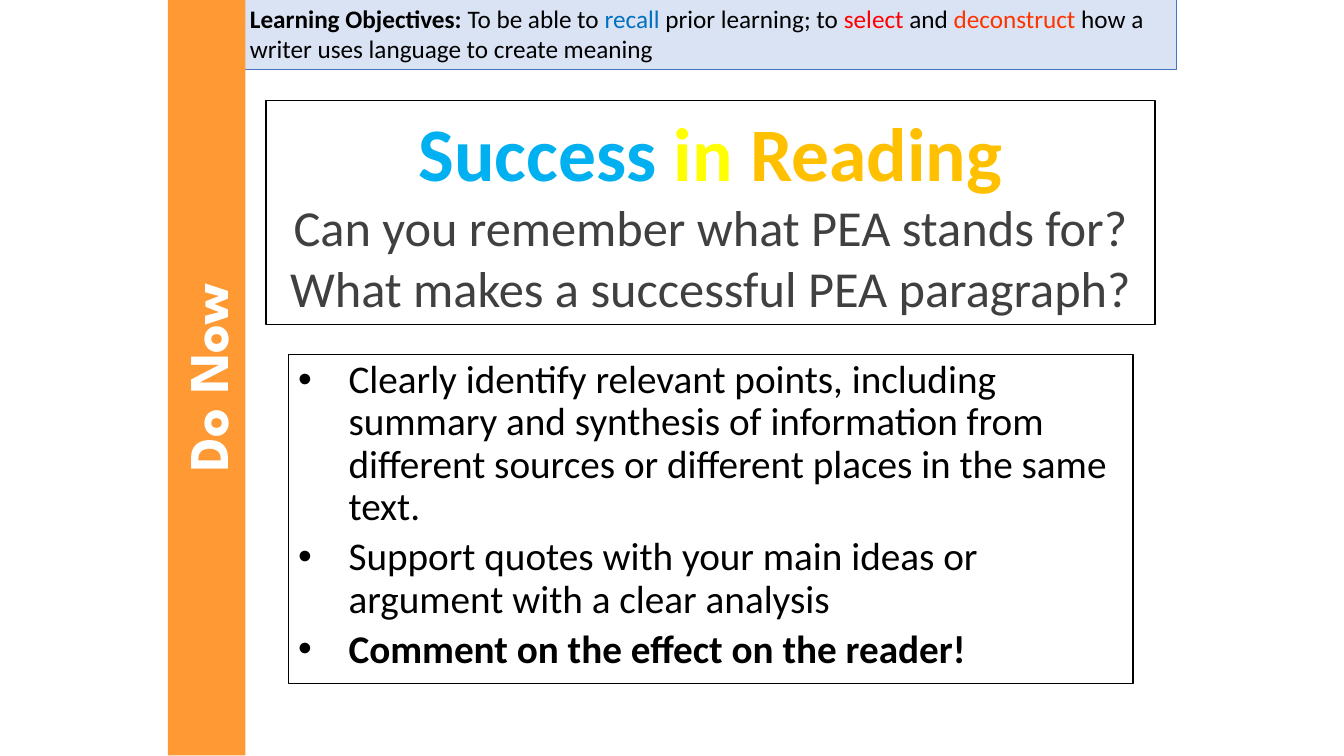
"""Build the Do Now slide on reading and PEA paragraphs."""
from dataclasses import dataclass
from typing import Optional

from lxml.etree import SubElement
from pptx import Presentation
from pptx.dml.color import RGBColor
from pptx.enum.text import MSO_AUTO_SIZE, PP_ALIGN
from pptx.oxml.ns import qn
from pptx.util import Pt


@dataclass(frozen=True)
class Theme:
    """Colours, fonts and type sizes."""
    black: str = "000000"
    white: str = "FFFFFF"
    grey: str = "404040"
    pale: str = "DAE3F3"
    edge: str = "4472C4"
    blue: str = "0070C0"
    red: str = "FF0000"
    rust: str = "FF3300"
    sky: str = "00B0F0"
    yellow: str = "FFFF00"
    gold: str = "FFC000"
    orange: str = "FF9933"
    body: str = "Calibri"
    band: str = "League Spartan"
    small: float = 18
    point: float = 28
    ask: float = 36
    label: float = 40
    title: float = 54


@dataclass(frozen=True)
class Box:
    """A filled text panel, measured in points."""
    left: float
    top: float
    width: float
    height: float
    fill: str
    line: Optional[str] = None
    weight: float = 1
    turn: float = 0


THEME = Theme()
POINTS = Box(205.9, 253.4, 603.4, 234.7, THEME.white, THEME.black)
GOALS = Box(171.4, -1.4, 668.9, 51.1, THEME.pale, THEME.edge, 0.5)
TITLE = Box(190.1, 72, 635, 159.8, THEME.white, THEME.black)
BAND = Box(-122.4, 241.9, 540, 55.4, THEME.orange, turn=270)


def draw(slide, box: Box):
    """Draw a panel and return its text frame."""
    panel = slide.shapes.add_textbox(
        Pt(box.left), Pt(box.top), Pt(box.width), Pt(box.height))
    panel.rotation = box.turn
    panel.fill.solid()
    panel.fill.fore_color.rgb = RGBColor.from_string(box.fill)
    if box.line:
        panel.line.color.rgb = RGBColor.from_string(box.line)
        panel.line.width = Pt(box.weight)
    frame = panel.text_frame
    frame.word_wrap = True
    frame.auto_size = MSO_AUTO_SIZE.SHAPE_TO_FIT_TEXT
    return frame


def start(frame, first: bool, align=PP_ALIGN.LEFT):
    """Return the first or a new paragraph, aligned."""
    para = frame.paragraphs[0] if first else frame.add_paragraph()
    para.alignment = align
    return para


def write(para, text: str, *, size: float, color: str = THEME.black,
          bold: bool = False, font: str = THEME.body) -> None:
    """Add a formatted run to a paragraph."""
    run = para.add_run()
    run.text = text
    run.font.name = font
    run.font.size = Pt(size)
    run.font.bold = bold
    run.font.color.rgb = RGBColor.from_string(color)


def mark(para) -> None:
    """Give a paragraph a hanging bullet and tight spacing."""
    para.line_spacing = 0.9
    para.space_before = Pt(5.6)
    props = para._p.get_or_add_pPr()
    props.set("marL", str(int(Pt(36))))
    props.set("indent", str(int(Pt(-36))))
    SubElement(props, qn("a:buFont")).set("typeface", "Arial")
    SubElement(props, qn("a:buChar")).set("char", "•")


def main() -> None:
    """Build and save the slide."""
    deck = Presentation()
    deck.slide_width, deck.slide_height = Pt(960), Pt(540)
    slide = deck.slides.add_slide(deck.slide_layouts[6])

    frame = draw(slide, POINTS)
    points = (
        ("Clearly identify relevant points, including summary and synthesis of "
         "information from different sources or different places in the same text.", False),
        ("Support quotes with your main ideas or argument with a clear analysis", False),
        ("Comment on the effect on the reader!", True),
    )
    for index, (text, bold) in enumerate(points):
        para = start(frame, index == 0)
        mark(para)
        write(para, text, size=THEME.point, bold=bold)

    para = start(draw(slide, GOALS), True)
    write(para, "Learning Objectives: ", size=THEME.small, bold=True)
    for text, color in (
        ("To be able to ", THEME.black),
        ("recall ", THEME.blue),
        ("prior learning; to ", THEME.black),
        ("select ", THEME.red),
        ("and ", THEME.black),
        ("deconstruct ", THEME.rust),
        ("how a writer uses language to create meaning", THEME.black),
    ):
        write(para, text, size=THEME.small, color=color)

    frame = draw(slide, TITLE)
    para = start(frame, True, PP_ALIGN.CENTER)
    for text, color in (("Success ", THEME.sky), ("in ", THEME.yellow),
                        ("Reading", THEME.gold)):
        write(para, text, size=THEME.title, color=color, bold=True)
    for text in ("Can you remember what PEA stands for?",
                 "What makes a successful PEA paragraph?"):
        para = start(frame, False, PP_ALIGN.CENTER)
        write(para, text, size=THEME.ask, color=THEME.grey)

    para = start(draw(slide, BAND), True, PP_ALIGN.CENTER)
    write(para, "Do Now", size=THEME.label, color=THEME.white, bold=True,
          font=THEME.band)
    deck.save("out.pptx")


if __name__ == "__main__":
    main()
